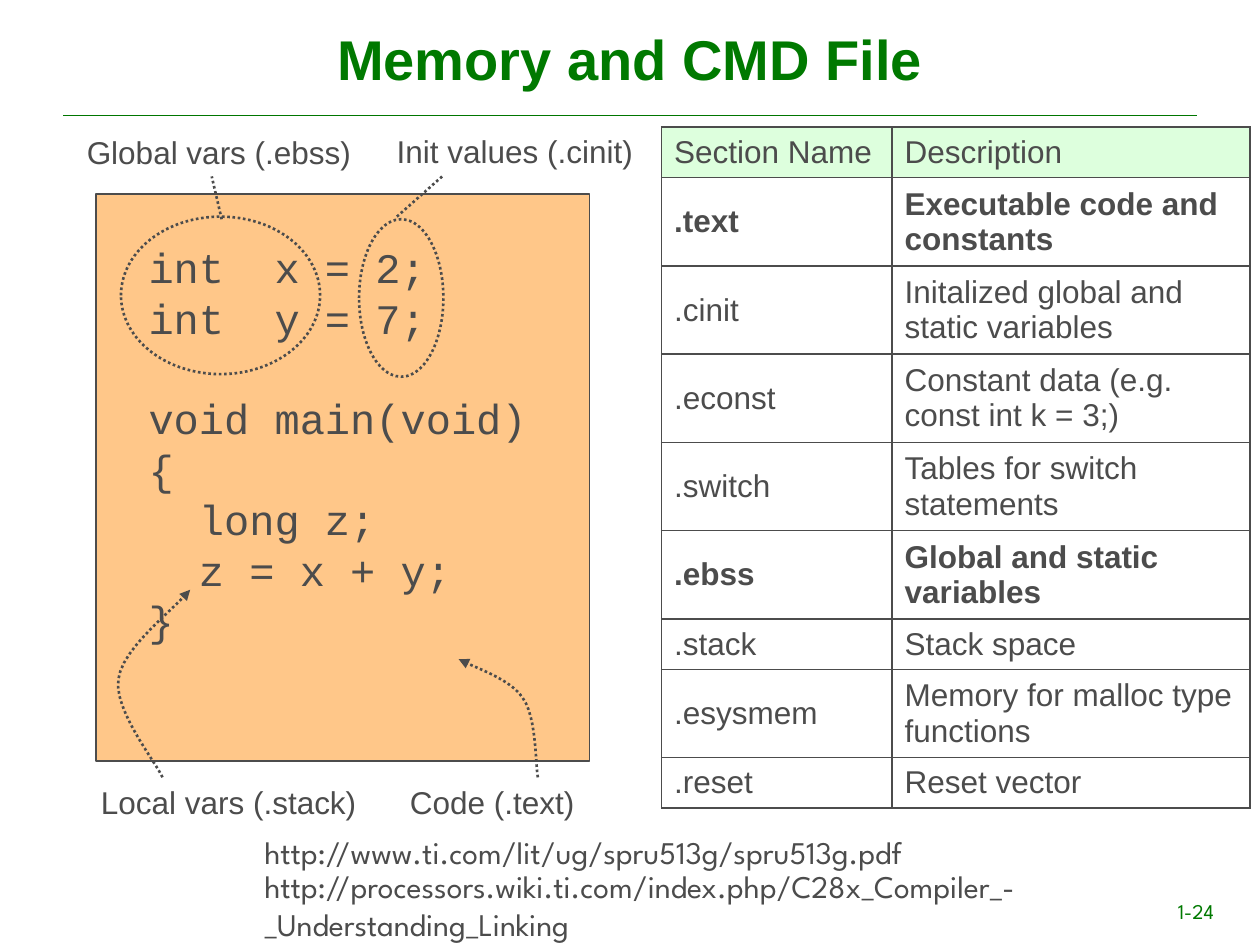
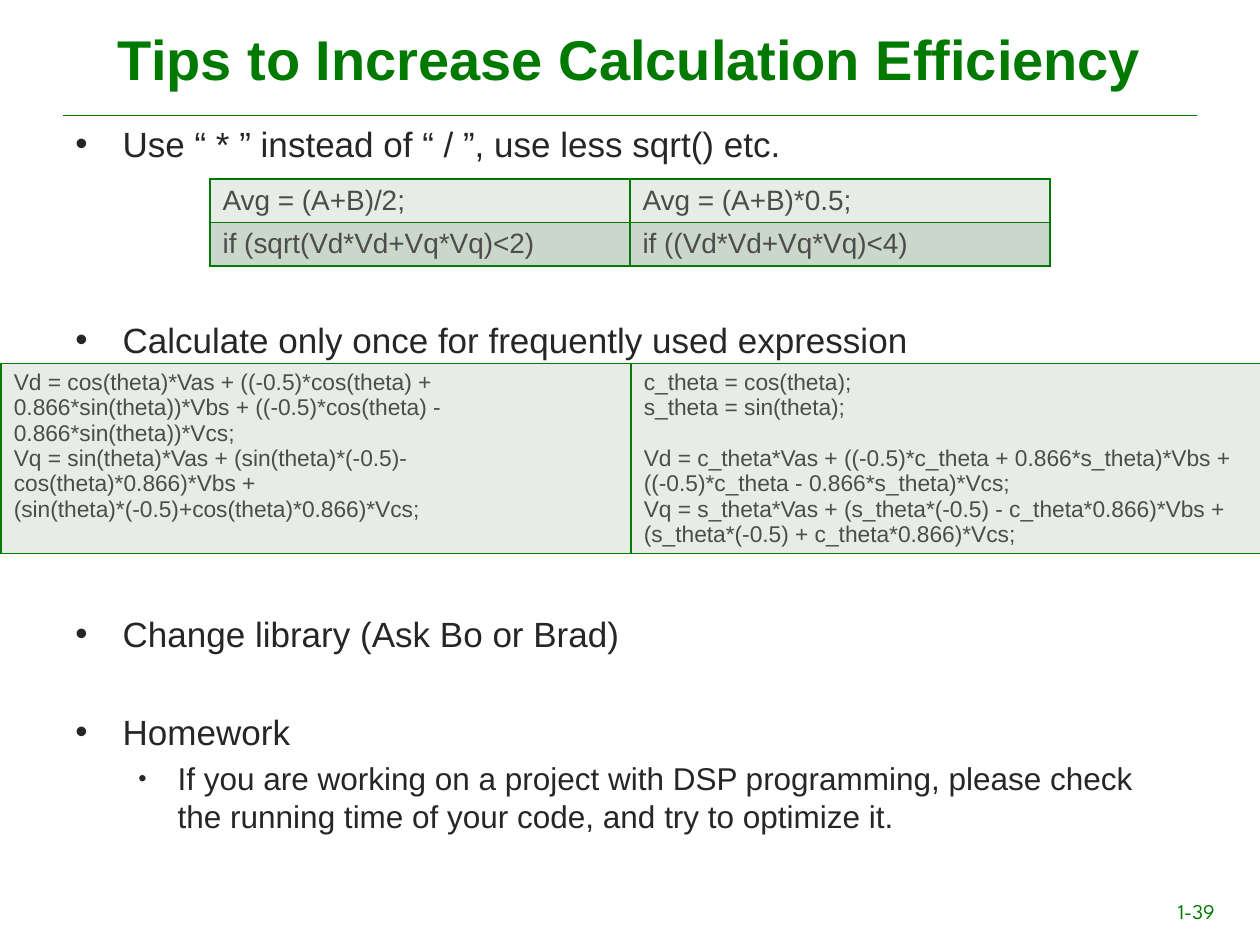
from dataclasses import dataclass

from pptx import Presentation
from pptx import oxml as ox
from pptx.dml import color
from pptx.enum import dml, shapes, text
from pptx.oxml import ns
from pptx.util import Pt


@dataclass(frozen=True)
class Theme:
    green: str = "007900"
    rule: str = "007600"
    ink: str = "4C4C4C"
    body_ink: str = "262626"
    code_fill: str = "FFC789"
    head_fill: str = "DDFFDD"
    light_row: str = "E7ECE7"
    dark_row: str = "CCD7CC"
    sans: str = "Arial"
    mono: str = "Courier New"
    display: str = "League Spartan"
    title_size: float = 32
    code_size: float = 24
    code_line: float = 28.8
    bullet_size: float = 20
    label_size: float = 18
    formula_size: float = 16
    formula_line: float = 17.7
    listing_size: float = 13
    listing_line: float = 14.5
    number_size: float = 12


T = Theme()
LEFT, CENTER = text.PP_ALIGN.LEFT, text.PP_ALIGN.CENTER
MIDDLE, TOP = text.MSO_ANCHOR.MIDDLE, text.MSO_ANCHOR.TOP


def rgb(value):
    return color.RGBColor.from_string(value)


def add_xml(parent, tag, index=None, **attrs):
    child = ox.parse_xml(f"<a:{tag} {ns.nsdecls('a')}/>")
    for name, value in attrs.items():
        child.set(name, str(value))
    parent.insert(len(parent) if index is None else index, child)
    return child


def bezier(start, *segments, steps=12):
    """Points along a chain of cubic curves."""
    points = [start]
    for a, b, end in segments:
        first = points[-1]
        for i in range(1, steps + 1):
            t = i / steps
            u = 1 - t
            points.append(tuple(
                u**3 * p0 + 3 * u * u * t * p1 + 3 * u * t * t * p2 + t**3 * p3
                for p0, p1, p2, p3 in zip(first, a, b, end)))
    return points


class Deck:
    def __init__(self, theme):
        self.theme = theme
        self.prs = Presentation()
        self.prs.slide_width, self.prs.slide_height = Pt(720), Pt(540)
        self.s = None

    def slide(self, title, number):
        """Start a slide with its rule, title and page number."""
        t = self.theme
        self.s = self.prs.slides.add_slide(self.prs.slide_layouts[6])
        self.line((36, 66.2), (684, 66.2), t.rule, 0.75, dotted=False)
        self.text(title, (36, 0, 648, 66.2), t.title_size, ink=t.green,
                  bold=True, align=CENTER, anchor=MIDDLE)
        self.text(number, (666, 509.8, 48.2, 23.8), t.number_size,
                  font=t.display, ink=t.green)

    def style(self, p, size, font=None, ink=None, bold=False, align=LEFT,
              pitch=None):
        p.alignment = align
        if pitch:
            p.line_spacing = Pt(pitch)
        for r in p.runs:
            f = r.font
            f.size, f.name, f.bold = Pt(size), font or self.theme.sans, bold
            f.color.rgb = rgb(ink or self.theme.ink)

    def text(self, content, box, size, wrap=True, anchor=TOP, **look):
        tf = self.s.shapes.add_textbox(*map(Pt, box)).text_frame
        tf.text = content
        tf.word_wrap, tf.vertical_anchor = wrap, anchor
        for p in tf.paragraphs:
            self.style(p, size, **look)
        return tf

    def stroke(self, sp, ink=None, width=1.5, dotted=True):
        sp.line.color.rgb = rgb(ink or self.theme.ink)
        sp.line.width = Pt(width)
        if dotted:
            sp.line.dash_style = dml.MSO_LINE.ROUND_DOT

    def shape(self, kind, box, fill=None, **stroke):
        sp = self.s.shapes.add_shape(kind, *map(Pt, box))
        sp.shadow.inherit = False
        if fill:
            sp.fill.solid()
            sp.fill.fore_color.rgb = rgb(fill)
        else:
            sp.fill.background()
        self.stroke(sp, **stroke)

    def line(self, start, end, ink=None, width=1.5, dotted=True):
        sp = self.s.shapes.add_connector(
            shapes.MSO_CONNECTOR.STRAIGHT, *map(Pt, start + end))
        self.stroke(sp, ink, width, dotted)
        add_xml(sp._element.spPr, "effectLst")

    def curved_arrow(self, points):
        start, *rest = [(Pt(x), Pt(y)) for x, y in points]
        builder = self.s.shapes.build_freeform(*start)
        builder.add_line_segments(rest, close=False)
        sp = builder.convert_to_shape()
        sp.shadow.inherit = False
        sp.fill.background()
        self.stroke(sp)
        add_xml(sp.line._get_or_add_ln(), "tailEnd", type="triangle")

    def bullets(self, items, box):
        """items: (text, level, space before)."""
        t = self.theme
        looks = [(t.bullet_size, 27, -27, 100), (t.label_size, 58.5, -22.5, 75)]
        tf = self.text("\n".join(item[0] for item in items), box, t.bullet_size)
        for p, (_, level, gap) in zip(tf.paragraphs, items):
            size, margin, indent, percent = looks[level]
            p.level = level
            pPr = p._p.get_or_add_pPr()
            pPr.set("marL", str(Pt(margin)))
            pPr.set("indent", str(Pt(indent)))
            add_xml(pPr, "buSzPct", val=percent * 1000)
            add_xml(pPr, "buFont", typeface=t.sans)
            add_xml(pPr, "buChar", char="•")
            p.space_before = Pt(gap)
            self.style(p, size, ink=t.body_ink)

    def table(self, rows, at, widths, heights, size, fills, border,
              anchor=TOP, bold_rows=(), pitch=None):
        frame = self.s.shapes.add_table(
            len(rows), len(widths), *map(Pt, (*at, sum(widths), sum(heights))))
        tbl = frame.table
        tbl.first_row = tbl.horz_banding = False
        for col, width in zip(tbl.columns, widths):
            col.width = Pt(width)
        for i, row in enumerate(rows):
            tbl.rows[i].height = Pt(heights[i])
            for j, content in enumerate(row):
                cell = tbl.cell(i, j)
                cell.text, cell.vertical_anchor = content, anchor
                for p in cell.text_frame.paragraphs:
                    self.style(p, size, bold=i in bold_rows, pitch=pitch)
                if fills[i]:
                    cell.fill.solid()
                    cell.fill.fore_color.rgb = rgb(fills[i])
                else:
                    cell.fill.background()
                self.borders(cell, border)
        return tbl

    def borders(self, cell, ink):
        tcPr = cell._tc.get_or_add_tcPr()
        for k, side in enumerate(("lnL", "lnR", "lnT", "lnB")):
            ln = add_xml(tcPr, side, k, w=Pt(1))
            add_xml(add_xml(ln, "solidFill"), "srgbClr", val=ink)


def memory_slide(d):
    d.slide("Memory and CMD File", "1-24")

    # Code panel
    d.shape(shapes.MSO_SHAPE.RECTANGLE, (54.7, 110.9, 282.2, 324),
            T.code_fill, width=1, dotted=False)
    code = ("int\tx = 2;\nint\ty = 7;\nvoid main(void)\n{\n"
            "  long z;\n  z = x + y;\n}")
    tf = d.text(code, (77.8, 134.6, 232.6, 239.8), T.code_size,
                wrap=False, font=T.mono, pitch=T.code_line)
    tf.paragraphs[2].space_before = Pt(T.code_line)

    # Marked variables and initial values
    for ring, start, end in (
            ((69.1, 123.8, 113.8, 90), (126.7, 125.3), (121, 100.8)),
            ((205.2, 125.3, 48.2, 90), (226.8, 123.8), (252.7, 100.8))):
        d.shape(shapes.MSO_SHAPE.OVAL, ring)
        d.line(start, end)

    # Labels
    for label, box, wrap, align in (
            ("Global vars (.ebss)", (42.5, 72.7, 167, 28.8), False, LEFT),
            ("Init values (.cinit)", (219.6, 72, 151.2, 28.8), False, LEFT),
            ("Local vars (.stack)", (46.8, 444.2, 167.8, 28.8), True, CENTER),
            ("Code (.text) ", (226.8, 444.2, 113.8, 28.8), True, CENTER)):
        d.text(label, box, T.label_size, wrap=wrap, align=align)

    # Arrows from the lower labels into the code
    d.curved_arrow(bezier(
        (307.4, 444.2),
        ((306, 437), (306.7, 409.7), (298.8, 398.9)),
        ((291.6, 387.4), (269.3, 380.9), (262.1, 376.6))))
    d.curved_arrow(bezier(
        (92.9, 444.2),
        ((88.6, 434.9), (64.8, 405.4), (67.7, 388.1)),
        ((69.8, 370.1), (100.1, 347.8), (108.7, 337))))

    # References
    for url, box in (
            ("http://www.ti.com/lit/ug/spru513g/spru513g.pdf",
             (144, 472.3, 455.8, 28.8)),
            ("http://processors.wiki.ti.com/index.php/"
             "C28x_Compiler_-_Understanding_Linking",
             (144, 491.8, 501.1, 51.1))):
        d.text(url, box, T.label_size, font=T.display)

    # Memory sections
    sections = [
        ("Section Name", "Description"),
        (".text", "Executable code and constants"),
        (".cinit", "Initalized global and static variables"),
        (".econst", "Constant data (e.g. const int k = 3;)"),
        (".switch", "Tables for switch statements"),
        (".ebss", "Global and static variables"),
        (".stack", "Stack space"),
        (".esysmem", "Memory for malloc type functions"),
        (".reset", "Reset vector"),
    ]
    one_line = (0, 6, 8)
    heights = [28.8 if i in one_line else 50.4 for i in range(len(sections))]
    d.table(sections, (378, 72.7), (131.8, 204.5), heights, T.label_size,
            [T.head_fill] + [None] * 8, T.ink, MIDDLE, bold_rows=(1, 5))


def tips_slide(d):
    d.slide("Tips to Increase Calculation Efficiency", "1-39")

    # Tips, with room left for the tables
    d.bullets([
        ("Use “ * ” instead of “ / ”, use less sqrt() etc.", 0, 0),
        ("Calculate only once for frequently used expression", 0, 88),
        ("Change library (Ask Bo or Brad)", 0, 144),
        ("Homework", 0, 32),
        ("If you are working on a project with DSP programming, please check "
         "the running time of your code, and try to optimize it.", 1, 4),
    ], (36, 66.2, 648, 401.8))

    # Cheaper operators
    d.table([("Avg = (A+B)/2;", "Avg = (A+B)*0.5;"),
             ("if (sqrt(Vd*Vd+Vq*Vq)<2)", "if ((Vd*Vd+Vq*Vq)<4)")],
            (120, 102.2), (240, 240), (25, 25), T.formula_size,
            (T.light_row, T.dark_row), T.green, pitch=T.formula_line)

    # Reused expressions
    before = ("Vd = cos(theta)*Vas + ((-0.5)*cos(theta) + 0.866*sin(theta))*Vbs"
              " + ((-0.5)*cos(theta) - 0.866*sin(theta))*Vcs;\n"
              "Vq = sin(theta)*Vas + (sin(theta)*(-0.5)-cos(theta)*0.866)*Vbs"
              " + (sin(theta)*(-0.5)+cos(theta)*0.866)*Vcs;")
    after = ("c_theta = cos(theta);\ns_theta = sin(theta);\n"
             "Vd = c_theta*Vas + ((-0.5)*c_theta + 0.866*s_theta)*Vbs"
             " + ((-0.5)*c_theta - 0.866*s_theta)*Vcs;\n"
             "Vq = s_theta*Vas + (s_theta*(-0.5) - c_theta*0.866)*Vbs"
             " + (s_theta*(-0.5) + c_theta*0.866)*Vcs;")
    tbl = d.table([(before, after)], (0.7, 207.6), (360, 360), (108.7,),
                  T.listing_size, (T.light_row,), T.green, pitch=T.listing_line)
    tbl.cell(0, 1).text_frame.paragraphs[2].space_before = Pt(T.listing_line)


def main():
    d = Deck(T)
    memory_slide(d)
    tips_slide(d)
    d.prs.save("out.pptx")


if __name__ == "__main__":
    main()
